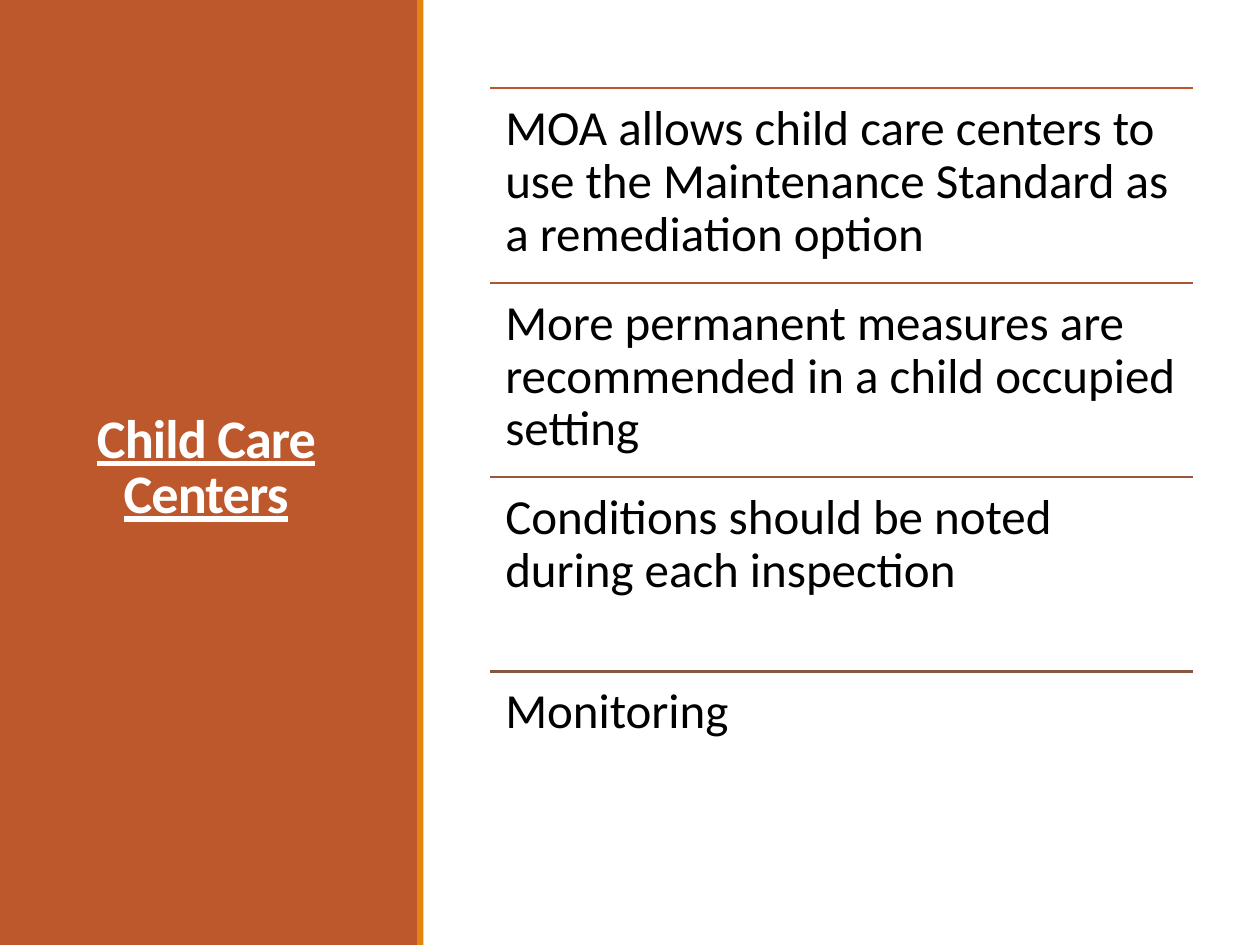
from dataclasses import dataclass

from lxml.etree import SubElement
from pptx import Presentation
from pptx.dml.color import RGBColor
from pptx.enum.shapes import MSO_CONNECTOR, MSO_SHAPE
from pptx.enum.text import MSO_ANCHOR, MSO_AUTO_SIZE, PP_ALIGN
from pptx.oxml.ns import qn
from pptx.slide import Slide
from pptx.util import Inches, Pt


@dataclass(frozen=True)
class Theme:
    font: str = "Calibri"
    title_size: float = 31
    body_size: float = 28
    rule_width: float = 1.25
    panel: str = "BD582C"
    accent: str = "E48312"
    title_text: str = "FFFFFF"
    body_text: str = "000000"


@dataclass(frozen=True)
class Point:
    text: str
    rule_color: str


THEME = Theme()
POINTS = [
    Point("MOA allows child care centers to use the Maintenance Standard "
          "as a remediation option", "BD582C"),
    Point("More permanent measures are recommended in a child occupied setting",
          "AA5834"),
    Point("Conditions should be noted during each inspection", "97573A"),
    Point("Monitoring", "865640"),
]
LIST_LEFT, LIST_TOP, LIST_WIDTH, ROW_HEIGHT = 3.89, 0.7, 5.58, 1.543
INSET = 0.12


def add_bar(slide: Slide, left: float, width: float, color: str) -> None:
    """Add a plain bar over the full slide height."""
    sp = slide.shapes.add_shape(
        MSO_SHAPE.RECTANGLE, Inches(left), 0, Inches(width), Inches(7.5))
    sp.shadow.inherit = False
    sp.fill.solid()
    sp.fill.fore_color.rgb = RGBColor.from_string(color)
    sp.line.fill.background()


def format_title(slide: Slide, text: str) -> None:
    title = slide.shapes.title
    title.left, title.top = 0, Inches(0.57)
    title.width, title.height = Inches(3.27), Inches(6.31)
    tf = title.text_frame
    tf.text = text
    tf.word_wrap = True
    tf.auto_size = MSO_AUTO_SIZE.NONE
    tf.vertical_anchor = MSO_ANCHOR.MIDDLE
    p = tf.paragraphs[0]
    p.alignment = PP_ALIGN.CENTER
    p.line_spacing = 0.85
    p.font.name = THEME.font
    p.font.size = Pt(THEME.title_size)
    p.font.bold = p.font.underline = True
    p.font.color.rgb = RGBColor.from_string(THEME.title_text)
    p.runs[0]._r.get_or_add_rPr().set("spc", "-50")
    # Bring the title in front of the panel
    slide.shapes.element.append(title.element)


def add_rule(slide: Slide, top: float, color: str) -> None:
    y = Inches(top)
    line = slide.shapes.add_connector(
        MSO_CONNECTOR.STRAIGHT, Inches(LIST_LEFT), y,
        Inches(LIST_LEFT + LIST_WIDTH), y)
    line.line.color.rgb = RGBColor.from_string(color)
    line.line.width = Pt(THEME.rule_width)
    SubElement(line.element.spPr, qn("a:effectLst"))


def add_point(slide: Slide, top: float, point: Point) -> None:
    add_rule(slide, top, point.rule_color)
    box = slide.shapes.add_textbox(
        Inches(LIST_LEFT), Inches(top), Inches(LIST_WIDTH), Inches(ROW_HEIGHT))
    tf = box.text_frame
    tf.word_wrap = True
    tf.margin_left = tf.margin_right = Inches(INSET)
    tf.margin_top = tf.margin_bottom = Inches(INSET)
    tf.text = point.text
    p = tf.paragraphs[0]
    p.line_spacing = 0.9
    p.font.name = THEME.font
    p.font.size = Pt(THEME.body_size)
    p.font.color.rgb = RGBColor.from_string(THEME.body_text)


def main() -> None:
    prs = Presentation()
    prs.slide_width, prs.slide_height = Inches(10), Inches(7.5)
    slide = prs.slides.add_slide(prs.slide_layouts.get_by_name("Title Only"))
    add_bar(slide, 0, 3.32, THEME.panel)
    format_title(slide, "Child Care Centers")
    add_bar(slide, 3.31, 0.05, THEME.accent)
    for row, point in enumerate(POINTS):
        add_point(slide, LIST_TOP + row * ROW_HEIGHT, point)
    prs.save("out.pptx")


if __name__ == "__main__":
    main()
